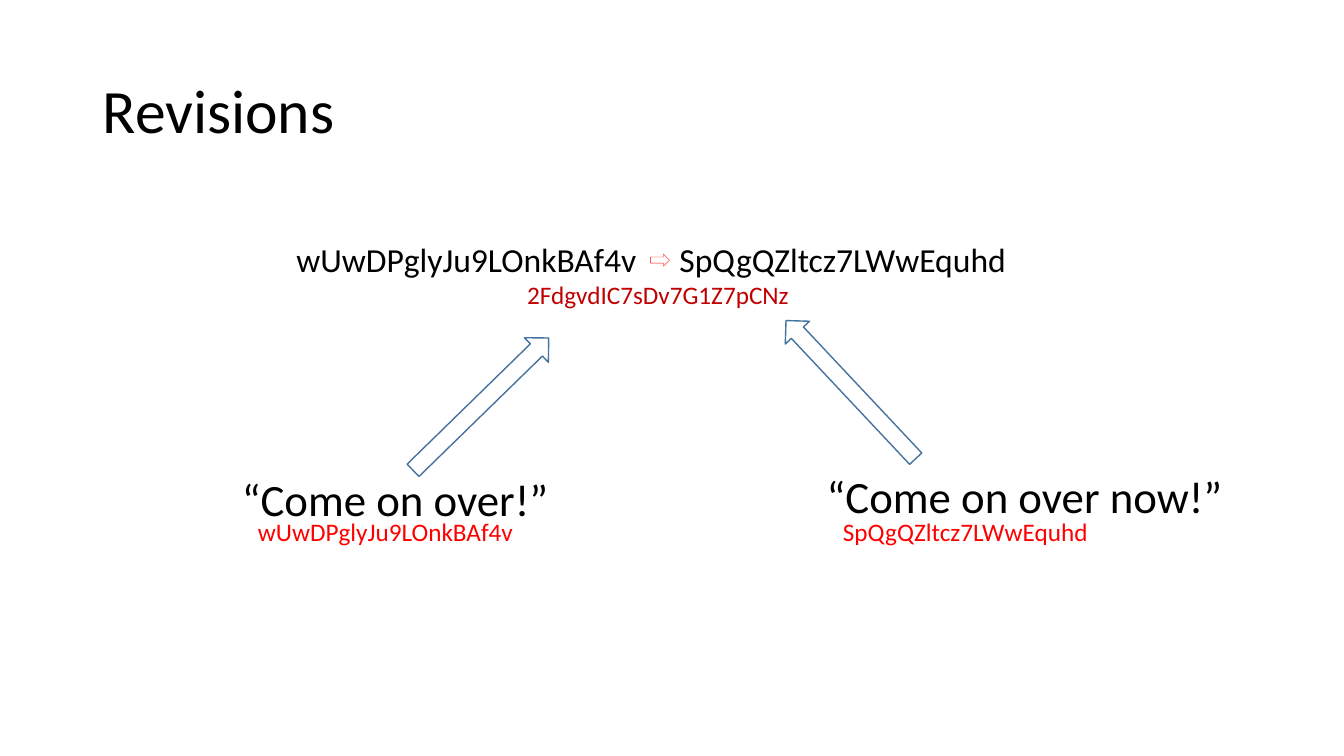
"""Build the Revisions slide: two messages feeding one revision record."""
import pptx
import pptx.util
from pptx.dml.color import RGBColor
from pptx.enum.shapes import MSO_SHAPE
from pptx.enum.text import MSO_ANCHOR, MSO_AUTO_SIZE

BLACK = RGBColor(0x00, 0x00, 0x00)
RED = RGBColor(0xFF, 0x00, 0x00)
DARK_RED = RGBColor(0xC0, 0x00, 0x00)
BLUE = RGBColor(0x43, 0x73, 0x9E)

WIDTH = pptx.util.Inches(13.33)
HEIGHT = pptx.util.Inches(7.5)
COLUMN = WIDTH / 100
ROW = HEIGHT / 100

OLD_ID = "wUwDPglyJu9LOnkBAf4v"
NEW_ID = "SpQgQZltcz7LWwEquhd"
REVISION_ID = "2FdgvdIC7sDv7G1Z7pCNz"


def place(left, top, width, height):
    """Turn columns and rows into slide lengths."""
    return int(left * COLUMN), int(top * ROW), int(width * COLUMN), int(height * ROW)


def add_span(box, text, size, color):
    """Write one run in the first paragraph of a box."""
    para = box.text_frame.paragraphs[0]
    span = para.add_run()
    span.text = text
    span.font.name = "Calibri"
    span.font.size = pptx.util.Pt(size)
    span.font.color.rgb = color
    return para


def add_title(page, text):
    """Add the slide title, centred vertically in its band."""
    box = page.shapes.add_textbox(*place(6.9, 5.33, 86.27, 19.33))
    box.text_frame.word_wrap = True
    box.text_frame.vertical_anchor = MSO_ANCHOR.MIDDLE
    add_span(box, text, 44, BLACK).line_spacing = 0.9


def add_label(page, left, top, width, text, size, color):
    """Add a one-line label whose height follows its text size."""
    height = (size * 1.2 / 72 + 0.1) * pptx.util.Inches(1) / ROW
    box = page.shapes.add_textbox(*place(left, top, width, height))
    box.text_frame.word_wrap = False
    box.text_frame.auto_size = MSO_AUTO_SIZE.SHAPE_TO_FIT_TEXT
    add_span(box, text, size, color)


def add_arrow(page, left, top, width, height, color, weight, rotation=0):
    """Add an outlined block arrow."""
    arrow = page.shapes.add_shape(
        MSO_SHAPE.RIGHT_ARROW, *place(left, top, width, height))
    arrow.shadow.inherit = False
    arrow.fill.background()
    arrow.line.color.rgb = color
    arrow.line.width = pptx.util.Pt(weight)
    arrow.rotation = rotation


def add_message(page, left, top, quote, quote_width, code, code_width):
    """Add a quoted message with its identifier below."""
    add_label(page, left, top, quote_width, quote, 32, BLACK)
    add_label(page, left + 1.2, 67.6, code_width, code, 18, RED)


def main():
    """Build and save the deck."""
    deck = pptx.Presentation()
    deck.slide_width, deck.slide_height = WIDTH, HEIGHT
    page = deck.slides.add_slide(deck.slide_layouts[6])

    add_title(page, "Revisions")
    add_message(page, 17.25, 61.73, "“Come on over!”", 24.53, OLD_ID, 20.7)
    add_message(page, 60.77, 61.33, "“Come on over now!”", 31.21, NEW_ID, 19.95)

    add_label(page, 21.31, 30.93, 27.08, OLD_ID, 24, BLACK)
    add_label(page, 49.81, 30.93, 26.03, NEW_ID, 24, BLACK)
    add_arrow(page, 48.39, 33.6, 1.43, 1.6, RED, 0.25)
    add_label(page, 38.48, 36.27, 21.23, REVISION_ID, 18, DARK_RED)

    add_arrow(page, 28.73, 51.2, 14.1, 4.53, BLUE, 1, 315.7)
    add_arrow(page, 56.26, 49.33, 14.1, 4.4, BLUE, 1, 226.8)
    deck.save("out.pptx")


if __name__ == "__main__":
    main()
